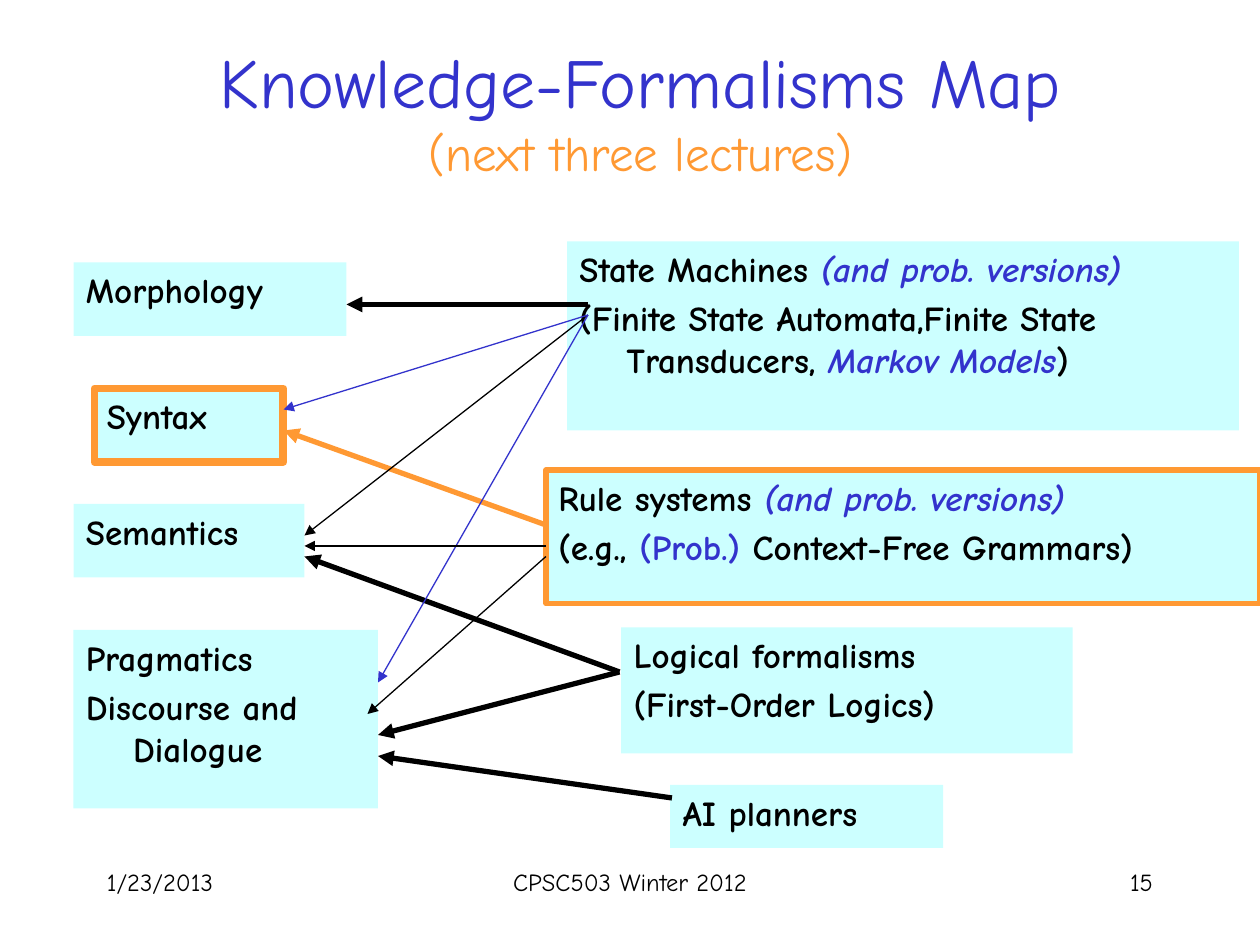
from lxml.etree import SubElement
from pptx import Presentation
from pptx.dml.color import RGBColor
from pptx.enum.shapes import MSO_CONNECTOR, MSO_SHAPE
from pptx.enum.text import MSO_ANCHOR, PP_ALIGN
from pptx.oxml.ns import qn
from pptx.util import Pt

FONT = "Comic Neue"
COLORS = {"black": "000000", "blue": "3333CC", "orange": "FF9933", "cyan": "CCFFFF"}
THICK, THIN = 3, 0.75


def rgb(name):
    return RGBColor.from_string(COLORS[name])


def add_run(paragraph, text, size, color="black", bold=None, italic=None):
    run = paragraph.add_run()
    run.text = text
    font = run.font
    font.name, font.size, font.bold, font.italic = FONT, Pt(size), bold, italic
    font.color.rgb = rgb(color)


presentation = Presentation()
presentation.slide_width, presentation.slide_height = Pt(720), Pt(540)
slide = presentation.slides.add_slide(presentation.slide_layouts[6])

# Title
title = slide.shapes.add_textbox(Pt(72), Pt(18), Pt(588), Pt(90))
title.text_frame.word_wrap = True
title.text_frame.vertical_anchor = MSO_ANCHOR.MIDDLE
paragraph = title.text_frame.paragraphs[0]
paragraph.alignment = PP_ALIGN.CENTER
add_run(paragraph, "Knowledge-Formalisms Map", 40, "blue")
paragraph.add_line_break()
add_run(paragraph, "(next three lectures)", 28, "orange")

# Footer: left, width, alignment, text
footers = [
    (54, 150, PP_ALIGN.LEFT, "1/23/2013"),
    (246, 228, PP_ALIGN.CENTER, "CPSC503 Winter 2012"),
    (516, 150, PP_ALIGN.RIGHT, "15"),
]
for left, width, alignment, text in footers:
    footer = slide.shapes.add_textbox(Pt(left), Pt(492), Pt(width), Pt(36))
    footer.text_frame.word_wrap = True
    paragraph = footer.text_frame.paragraphs[0]
    paragraph.alignment = alignment
    add_run(paragraph, text, 14)

# Boxes: left, top, width, height, outline width, paragraphs of (text, color, italic)
versions = ("(and prob. versions)", "blue", True)
boxes = [
    (355, 358.5, 258, 72, 0, [
        [("Logical formalisms", "black", False)],
        [("(First-Order Logics)", "black", False)],
    ]),
    (312, 268.5, 408, 76.5, 3, [
        [("Rule systems ", "black", False), versions],
        [("(e.g., ", "black", False), ("(Prob.)", "blue", False),
         (" Context-Free Grammars)", "black", False)],
    ]),
    (324, 138, 384, 108, 0, [
        [("State Machines ", "black", False), versions],
        [("(Finite State Automata,Finite State Transducers, ", "black", False),
         ("Markov Models", "blue", True), (")", "black", False)],
    ]),
    (42, 150, 156, 42, 0, [[("Morphology", "black", False)]]),
    (54, 222, 108, 42, 4.5, [[("Syntax", "black", False)]]),
    (42, 288, 132, 42, 0, [[("Semantics", "black", False)]]),
    (42, 360, 174, 102, 0, [
        [("Pragmatics", "black", False)],
        [("Discourse and Dialogue", "black", False)],
    ]),
    (383, 448.5, 156, 36, 0, [[("AI planners", "black", False)]]),
]
for left, top, width, height, outline, paragraphs in boxes:
    box = slide.shapes.add_shape(
        MSO_SHAPE.RECTANGLE, Pt(left), Pt(top), Pt(width), Pt(height))
    box.shadow.inherit = False
    box.fill.solid()
    box.fill.fore_color.rgb = rgb("cyan")
    if outline:
        box.line.color.rgb = rgb("orange")
        box.line.width = Pt(outline)
    else:
        box.line.fill.background()
    frame = box.text_frame
    frame.word_wrap = True
    frame.vertical_anchor = MSO_ANCHOR.TOP
    for index, runs in enumerate(paragraphs):
        paragraph = frame.add_paragraph() if index else frame.paragraphs[0]
        paragraph.alignment = PP_ALIGN.LEFT
        paragraph.space_before = Pt(4)
        properties = paragraph._p.get_or_add_pPr()
        properties.set("marL", str(Pt(27)))
        properties.set("indent", str(Pt(-27)))
        for text, color, italic in runs:
            add_run(paragraph, text, 20, color, True, italic)

# Arrows from formalism to knowledge: start, end, color, width
arrows = [
    ((336, 174), (198, 174), "black", THICK),
    ((312, 300), (162, 246), "orange", THICK),
    ((354, 384), (174, 318), "black", THICK),
    ((354, 384), (216, 420), "black", THICK),
    ((336, 180), (174, 306), "black", THIN),
    ((336, 180), (216, 390), "blue", THIN),
    ((312, 312), (174, 312), "black", THIN),
    ((312, 318), (210, 408), "black", THIN),
    ((384, 456), (216, 432), "black", THICK),
    ((336, 180), (162, 234), "blue", THIN),
]
for start, end, color, width in arrows:
    arrow = slide.shapes.add_connector(
        MSO_CONNECTOR.STRAIGHT, *[Pt(value) for value in start + end])
    arrow.line.color.rgb = rgb(color)
    arrow.line.width = Pt(width)
    SubElement(arrow.line._get_or_add_ln(), qn("a:tailEnd"), type="triangle")
    SubElement(arrow._element.spPr, qn("a:effectLst"))

presentation.save("out.pptx")
